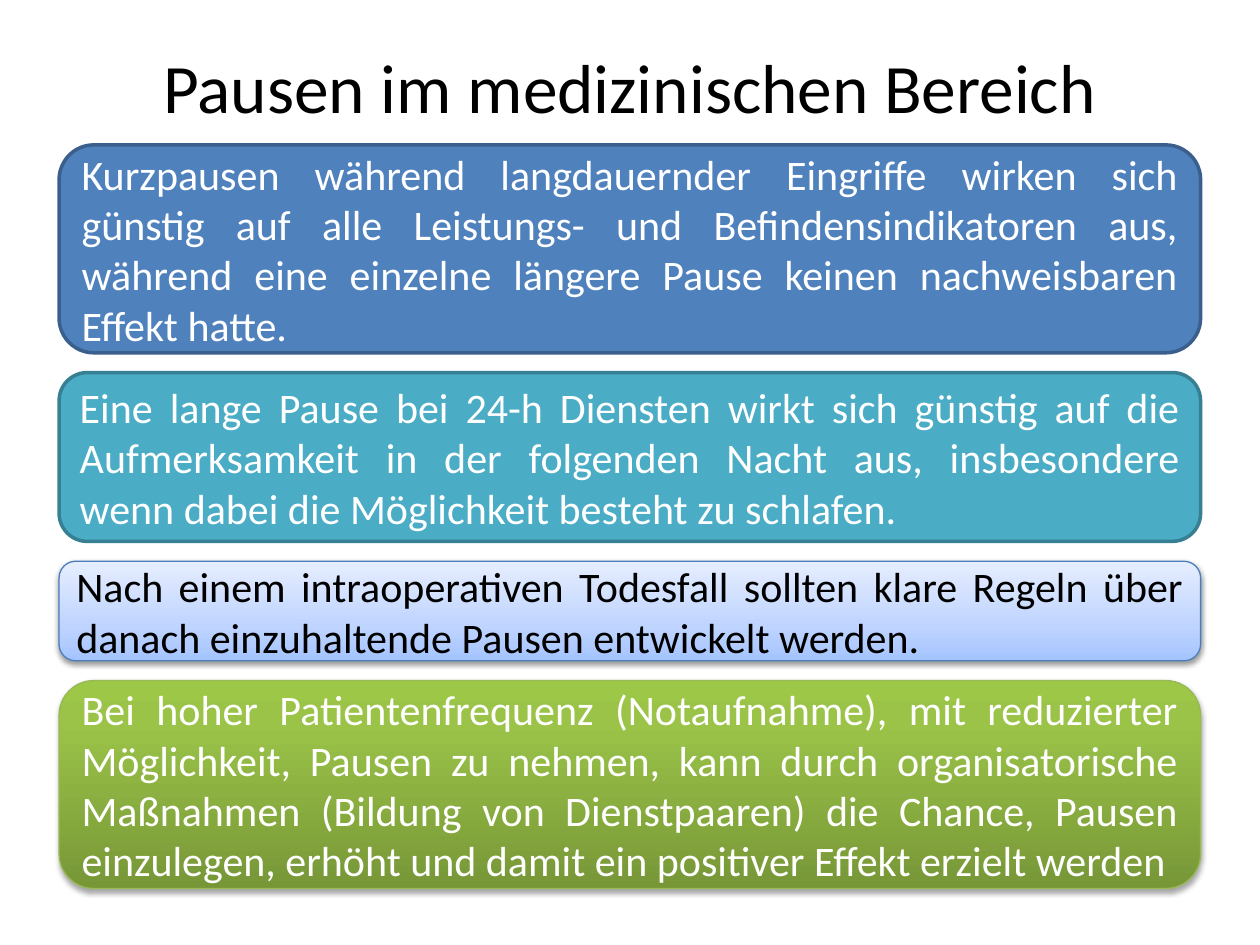
from pptx import Presentation
from pptx.dml.color import RGBColor
from pptx.enum.shapes import MSO_SHAPE as Shape
from pptx.enum.text import MSO_ANCHOR as Anchor, PP_ALIGN as Align
from pptx.oxml import parse_xml
from pptx.oxml.ns import nsdecls, qn
from pptx.util import Pt

BLACK = RGBColor(0x00, 0x00, 0x00)
WHITE = RGBColor(0xFF, 0xFF, 0xFF)
BLUE = RGBColor(0x4F, 0x81, 0xBD)
DARK_BLUE = RGBColor(0x3A, 0x5F, 0x8C)
TEAL = RGBColor(0x4B, 0xAC, 0xC6)
DARK_TEAL = RGBColor(0x37, 0x7F, 0x92)
EDGE_BLUE = RGBColor(0x4B, 0x7E, 0xBC)
EDGE_GREEN = RGBColor(0x98, 0xB9, 0x55)
PALE_BLUES = [
    (0, RGBColor(0xA4, 0xC4, 0xFF)),
    (35, RGBColor(0xBF, 0xD4, 0xFF)),
    (100, RGBColor(0xE6, 0xEE, 0xFF)),
]
GREENS = [
    (0, RGBColor(0x77, 0x97, 0x37)),
    (80, RGBColor(0x9B, 0xC3, 0x48)),
    (100, RGBColor(0x9D, 0xC7, 0x46)),
]

FONT = "Calibri"
TITLE = "Pausen im medizinischen Bereich"
FINDINGS = [
    dict(text="Kurzpausen während langdauernder Eingriffe wirken sich günstig auf alle "
              "Leistungs- und Befindensindikatoren aus, während eine einzelne längere "
              "Pause keinen nachweisbaren Effekt hatte.",
         height=118.8, fill=BLUE, edge=DARK_BLUE),
    dict(text="Eine lange Pause bei 24-h Diensten wirkt sich günstig auf die "
              "Aufmerksamkeit in der folgenden Nacht aus, insbesondere wenn dabei die "
              "Möglichkeit besteht zu schlafen.",
         height=96.5, fill=TEAL, edge=DARK_TEAL),
    dict(text="Nach einem intraoperativen Todesfall sollten klare Regeln über danach "
              "einzuhaltende Pausen entwickelt werden.",
         height=56.9, fill=PALE_BLUES, edge=EDGE_BLUE, edge_width=0.75,
         color=BLACK, shadow=(38, 1.6)),
    dict(text="Bei hoher Patientenfrequenz (Notaufnahme), mit reduzierter Möglichkeit, "
              "Pausen zu nehmen, kann durch organisatorische Maßnahmen (Bildung von "
              "Dienstpaaren) die Chance, Pausen einzulegen, erhöht und damit ein "
              "positiver Effekt erzielt werden",
         height=118.8, fill=GREENS, edge=EDGE_GREEN, edge_width=0.75, shadow=(35, 1.8)),
]


def write_text(frame, text, size, color, align):
    """Fill a text frame with one vertically centred paragraph."""
    frame.word_wrap = True
    frame.vertical_anchor = Anchor.MIDDLE
    frame.text = text
    paragraph = frame.paragraphs[0]
    paragraph.alignment = align
    font = paragraph.runs[0].font
    font.name, font.size = FONT, Pt(size)
    font.color.rgb = color


def fill_gradient(panel, stops):
    """Fill a panel with colour stops running from bottom to top."""
    panel.fill.gradient()
    panel.fill.gradient_angle = 90
    stop_list = panel._element.spPr.find(qn("a:gradFill")).find(qn("a:gsLst"))
    for old_stop in list(stop_list):
        stop_list.remove(old_stop)
    for percent, color in stops:
        stop_list.append(parse_xml(
            f'<a:gs {nsdecls("a")} pos="{percent * 1000}">'
            f'<a:srgbClr val="{color}"/></a:gs>'))


def drop_shadow(panel, opacity, distance):
    """Cast a soft black shadow straight down."""
    effects = panel._element.spPr.find(qn("a:effectLst"))
    effects.append(parse_xml(
        f'<a:outerShdw {nsdecls("a")} blurRad="{Pt(3.1)}" dist="{Pt(distance)}" '
        f'dir="5400000" rotWithShape="0"><a:srgbClr val="{BLACK}">'
        f'<a:alpha val="{opacity * 1000}"/></a:srgbClr></a:outerShdw>'))


def add_title(slide, left, top, width, height):
    """Place the centred slide title."""
    title = slide.shapes.add_textbox(Pt(left), Pt(top), Pt(width), Pt(height))
    write_text(title.text_frame, TITLE, 39.6, BLACK, Align.CENTER)


def add_finding(slide, left, top, width, height, text, fill, edge,
                edge_width=2, color=WHITE, shadow=None):
    """Place one rounded panel with a justified statement."""
    panel = slide.shapes.add_shape(
        Shape.ROUNDED_RECTANGLE, Pt(left), Pt(top), Pt(width), Pt(height))
    panel.shadow.inherit = False
    if isinstance(fill, list):
        fill_gradient(panel, fill)
    else:
        panel.fill.solid()
        panel.fill.fore_color.rgb = fill
    panel.line.color.rgb = edge
    panel.line.width = Pt(edge_width)
    if shadow:
        drop_shadow(panel, *shadow)
    write_text(panel.text_frame, text, 24, color, Align.JUSTIFY)


def add_findings(slide, left, top, width, gap):
    """Stack the statements downwards with equal gaps."""
    for finding in FINDINGS:
        add_finding(slide, left, top, width, **finding)
        top += finding["height"] + gap


def main():
    """Build and save the slide."""
    deck = Presentation()
    deck.slide_width, deck.slide_height = Pt(720), Pt(540)
    slide = deck.slides.add_slide(deck.slide_layouts[6])
    add_title(slide, 36, 21.6, 648, 55.4)
    add_findings(slide, 33.8, 82.8, 652.3, 11.3)
    deck.save("out.pptx")


if __name__ == "__main__":
    main()
